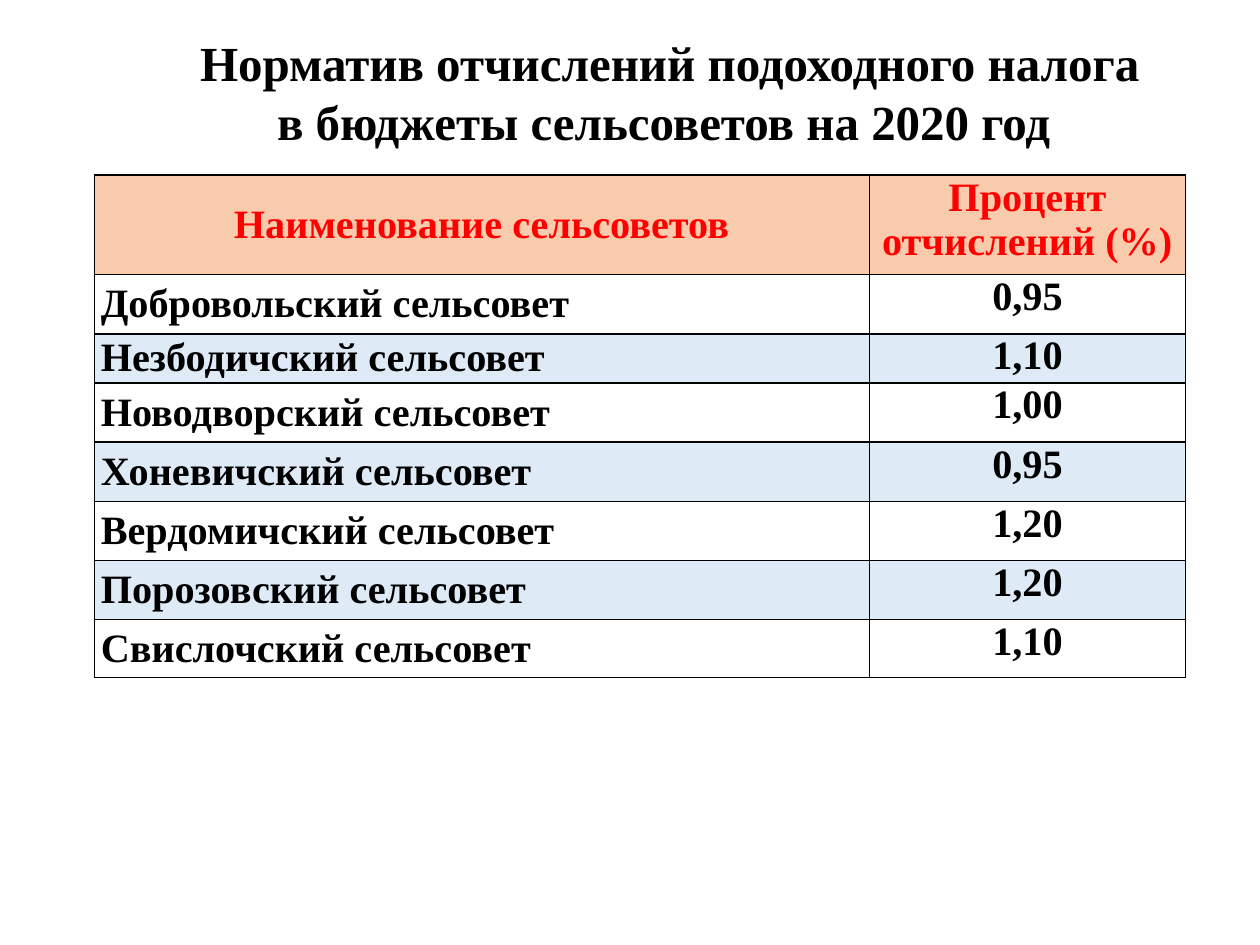
from lxml.etree import SubElement
from pptx import Presentation
from pptx.dml.color import RGBColor
from pptx.enum.text import MSO_ANCHOR, PP_ALIGN
from pptx.oxml.ns import qn
from pptx.util import Inches, Pt

TITLE = "Норматив отчислений подоходного налога в бюджеты сельсоветов на 2020 год "
HEADINGS = ("Наименование сельсоветов", "Процент\nотчислений (%)")
RATES = [
    ("Добровольский сельсовет", "0,95"),
    ("Незбодичский сельсовет", "1,10"),
    ("Новодворский сельсовет", "1,00"),
    ("Хоневичский сельсовет", "0,95"),
    ("Вердомичский сельсовет", "1,20"),
    ("Порозовский сельсовет", "1,20"),
    ("Свислочский сельсовет", "1,10"),
]
COLUMN_WIDTHS = (6.15, 2.51)
ROW_HEIGHTS = (0.79, 0.47, 0.39, 0.47, 0.47, 0.47, 0.47, 0.46)


def color(value):
    return RGBColor.from_string(value)


def write(frame, text, size, ink, alignment):
    frame.text = text
    for paragraph in frame.paragraphs:
        paragraph.alignment = alignment
        paragraph.font.name = "Times New Roman"
        paragraph.font.size = Pt(size)
        paragraph.font.bold = True
        paragraph.font.color.rgb = color(ink)


def add_borders(cell):
    properties = cell._tc.get_or_add_tcPr()
    for position, side in enumerate(("lnL", "lnR", "lnT", "lnB")):
        border = properties.makeelement(qn(f"a:{side}"), {"w": str(Pt(1))})
        properties.insert(position, border)
        fill = SubElement(border, qn("a:solidFill"))
        SubElement(fill, qn("a:srgbClr"), val="000000")


def fill_cell(cell, text, background, ink, alignment, anchor):
    cell.margin_left = cell.margin_right = Inches(0.05)
    cell.margin_top = cell.margin_bottom = 0
    cell.vertical_anchor = anchor
    cell.fill.solid()
    cell.fill.fore_color.rgb = color(background)
    write(cell.text_frame, text, 23, ink, alignment)
    add_borders(cell)


def add_title(slide, left, top, width, height):
    title = slide.shapes.add_textbox(left, top, width, height).text_frame
    title.word_wrap = True
    write(title, TITLE, 28, "000000", PP_ALIGN.CENTER)


def add_rates(slide, left, top, width, height):
    rows = [HEADINGS, *RATES]
    rates = slide.shapes.add_table(
        len(rows), len(HEADINGS), left, top, width, height
    ).table
    for column, share in zip(rates.columns, COLUMN_WIDTHS):
        column.width = int(width * share / sum(COLUMN_WIDTHS))
    for row, share in zip(rates.rows, ROW_HEIGHTS):
        row.height = int(height * share / sum(ROW_HEIGHTS))

    for number, (council, percent) in enumerate(rows):
        if number == 0:
            background, ink, council_alignment = "F8CBAD", "FF0000", PP_ALIGN.CENTER
        else:
            background = "FFFFFF" if number % 2 else "DEEBF7"
            ink, council_alignment = "000000", PP_ALIGN.JUSTIFY
        fill_cell(rates.cell(number, 0), council, background, ink,
                  council_alignment, MSO_ANCHOR.MIDDLE)
        fill_cell(rates.cell(number, 1), percent, background, ink,
                  PP_ALIGN.CENTER, MSO_ANCHOR.TOP)


def main():
    deck = Presentation()
    deck.slide_width, deck.slide_height = Inches(10), Inches(7.5)
    slide = deck.slides.add_slide(deck.slide_layouts[6])
    add_rates(slide, Inches(0.75), Inches(1.39),
              Inches(sum(COLUMN_WIDTHS)), Inches(sum(ROW_HEIGHTS)))
    add_title(slide, Inches(1.38), Inches(0.21), Inches(7.87), Inches(1.04))
    deck.save("out.pptx")


if __name__ == "__main__":
    main()
